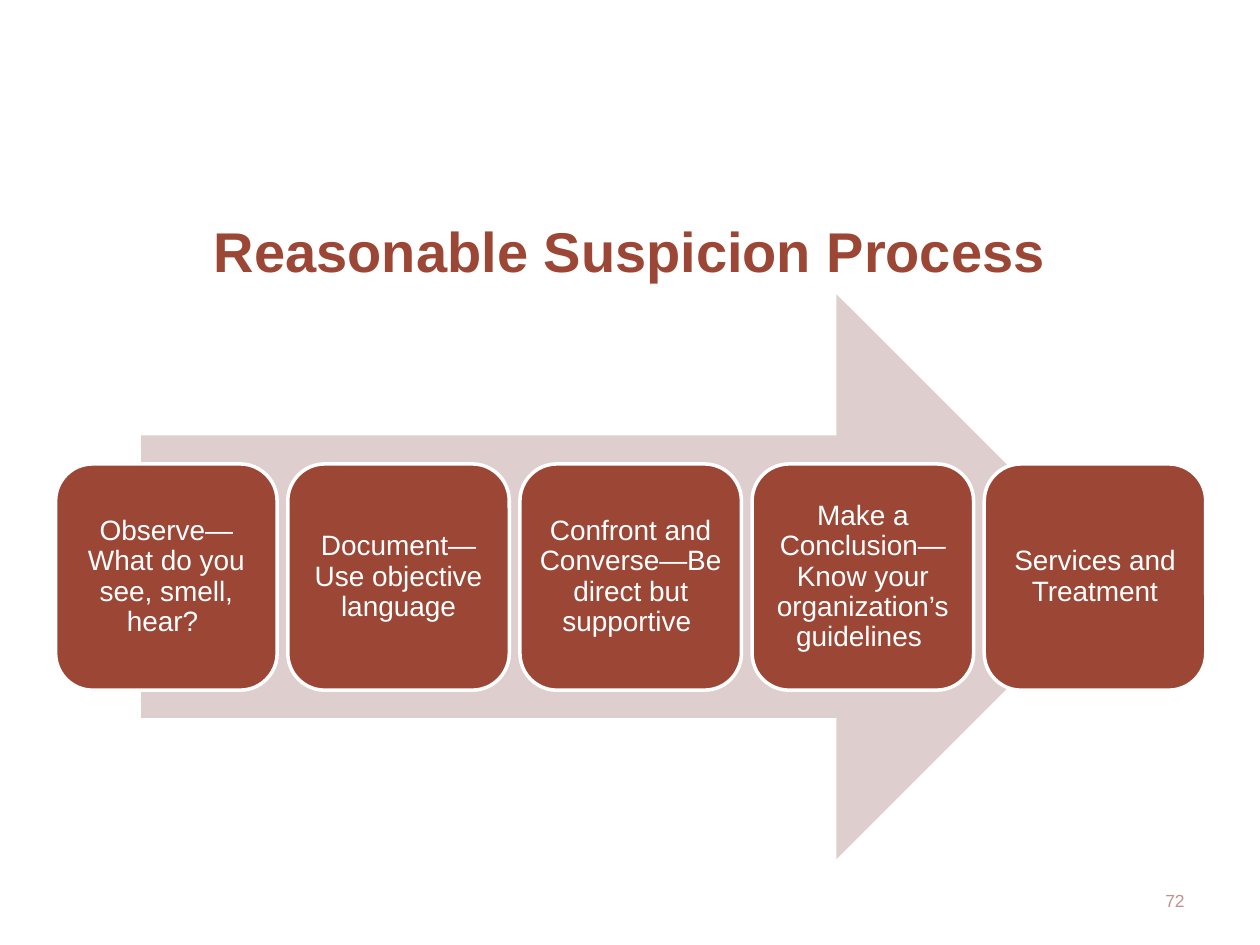
from dataclasses import dataclass

from pptx import Presentation
from pptx.dml.color import RGBColor as RGB
from pptx.enum.shapes import MSO_SHAPE as Preset
from pptx.enum.text import MSO_ANCHOR as Anchor, PP_ALIGN as Align
from pptx.slide import Slide
from pptx.text.text import TextFrame
from pptx.util import Pt


@dataclass(frozen=True)
class Theme:
    font: str = "Arial"
    brick: RGB = RGB(0x9C, 0x46, 0x36)
    blush: RGB = RGB(0xDE, 0xCF, 0xCE)
    rose: RGB = RGB(0xBB, 0x94, 0x91)
    white: RGB = RGB(0xFF, 0xFF, 0xFF)
    title_size: float = 32
    step_size: float = 16
    number_size: float = 10


@dataclass(frozen=True)
class Box:
    left: float
    top: float
    width: float
    height: float

    def lengths(self) -> tuple[Pt, Pt, Pt, Pt]:
        return Pt(self.left), Pt(self.top), Pt(self.width), Pt(self.height)


@dataclass(frozen=True)
class Step:
    text: str
    box: Box


THEME = Theme()
STEP_PITCH = 132.66
STEP_TEXTS = (
    "Observe—What do you see, smell, hear? ",
    "Document—Use objective language",
    "Confront and Converse—Be direct but supportive ",
    "Make a Conclusion—Know your organization’s guidelines ",
    "Services and Treatment",
)
STEPS = [
    Step(text, Box(31.8 + index * STEP_PITCH, 265.1, 126.6, 129.3))
    for index, text in enumerate(STEP_TEXTS)
]


def write(frame: TextFrame, text: str, *, size: float, color: RGB,
          align: Align = Align.CENTER, bold: bool = False,
          line_spacing: float = 1.0, inset: tuple[float, float] = (7.2, 3.6)) -> None:
    frame.word_wrap = True
    frame.vertical_anchor = Anchor.MIDDLE
    frame.margin_left = frame.margin_right = Pt(inset[0])
    frame.margin_top = frame.margin_bottom = Pt(inset[1])
    paragraph = frame.paragraphs[0]
    paragraph.alignment = align
    paragraph.line_spacing = line_spacing
    paragraph.space_before = Pt(0)
    run = paragraph.add_run()
    run.text = text
    run.font.name = THEME.font
    run.font.size = Pt(size)
    run.font.bold = bold
    run.font.color.rgb = color


def draw_arrow(slide: Slide, box: Box) -> None:
    arrow = slide.shapes.add_shape(Preset.RIGHT_ARROW, *box.lengths())
    arrow.shadow.inherit = False
    arrow.fill.solid()
    arrow.fill.fore_color.rgb = THEME.blush
    arrow.line.fill.background()


def draw_step(slide: Slide, step: Step) -> None:
    card = slide.shapes.add_shape(Preset.ROUNDED_RECTANGLE, *step.box.lengths())
    card.shadow.inherit = False
    card.fill.solid()
    card.fill.fore_color.rgb = THEME.brick
    card.line.color.rgb = THEME.white
    card.line.width = Pt(2)
    write(card.text_frame, step.text, size=THEME.step_size, color=THEME.white,
          line_spacing=0.9, inset=(4.8, 4.8))


def main() -> None:
    deck = Presentation()
    deck.slide_width, deck.slide_height = Pt(720), Pt(540)
    slide = deck.slides.add_slide(deck.slide_layouts[5])

    title = slide.shapes.title
    title.left, title.top, title.width, title.height = Box(48, 110.2, 624, 65.5).lengths()
    write(title.text_frame, "Reasonable Suspicion Process", size=THEME.title_size,
          color=THEME.brick, bold=True)

    page_number = slide.shapes.add_textbox(*Box(516, 500.5, 168, 28.75).lengths())
    write(page_number.text_frame, "72", size=THEME.number_size, color=THEME.rose,
          align=Align.RIGHT)

    draw_arrow(slide, Box(80.6, 168, 558.8, 323))
    for step in STEPS:
        draw_step(slide, step)

    deck.save("out.pptx")


if __name__ == "__main__":
    main()
